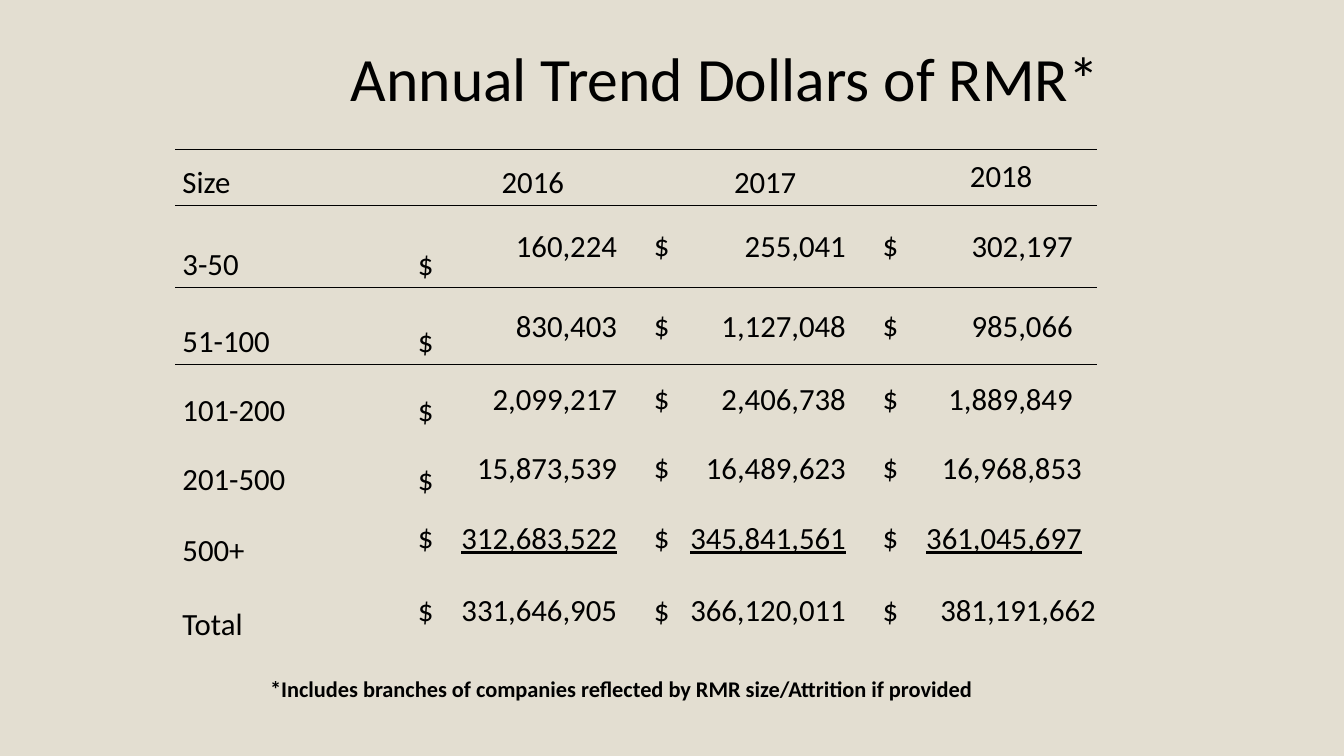
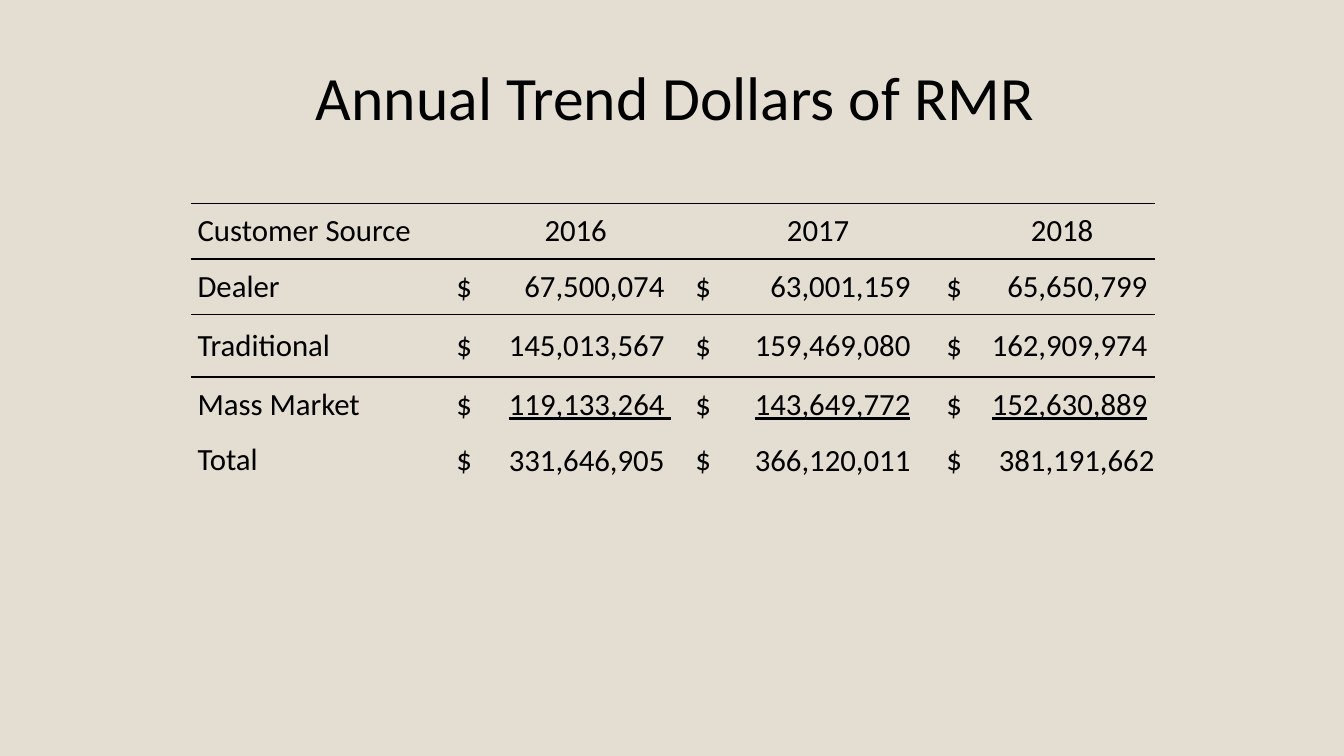
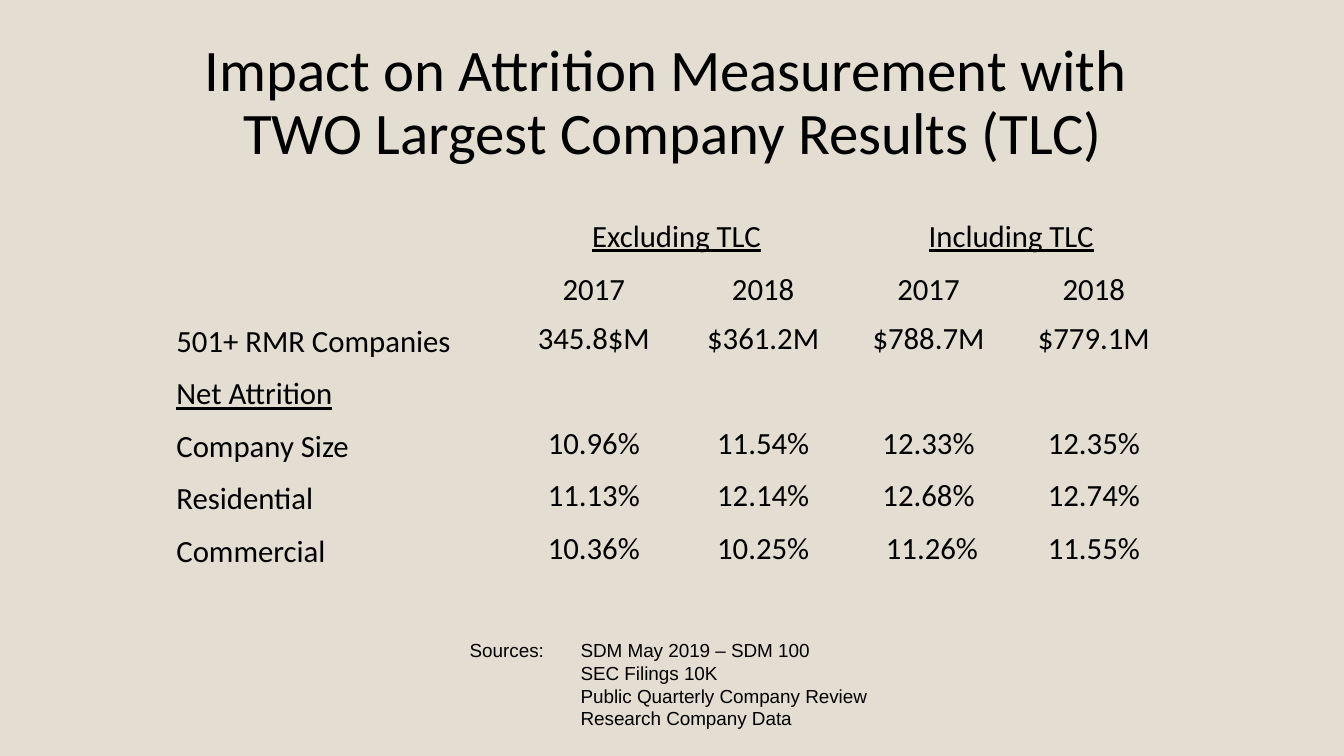
from itertools import product

from lxml import etree
from pptx import Presentation
from pptx.dml.color import RGBColor
from pptx.enum.text import MSO_ANCHOR as Anchor, PP_ALIGN as Align
from pptx.oxml.ns import qn
from pptx.util import Inches, Pt

COLORS = {"background": "E3DED1", "ink": "000000"}
BODY_FONT, SOURCE_FONT = "Calibri", "Arial"
TABLE_SIZE = 22
PLAIN_STYLE = "{2D5ABB26-0587-4C30-8999-92F81FD0307C}"
LABEL_INSETS = (0.07, 0.04, 0.07, 0.04)
WIDE_INSETS = (0.09, 0.04, 0.09, 0.04)
TIGHT_INSETS = (0.01, 0.01, 0.01, 0)


def write(para, text, size=TABLE_SIZE, font=BODY_FONT, bold=False,
          underline=False, align=Align.LEFT, spacing=None):
    """Put text in a paragraph; a newline becomes a line break."""
    para.alignment = align
    if spacing:
        para.line_spacing = spacing
    for index, line in enumerate(text.split("\n")):
        if index:
            para.add_line_break()
        span = para.add_run()
        span.text = line
        span.font.size = Pt(size)
        span.font.name = font
        span.font.bold = bold
        span.font.underline = underline
        span.font.color.rgb = RGBColor.from_string(COLORS["ink"])


def add_page(deck):
    page = deck.slides.add_slide(deck.slide_layouts[6])
    fill = page.background.fill
    fill.solid()
    fill.fore_color.rgb = RGBColor.from_string(COLORS["background"])
    return page


def add_text_frame(page, box, anchor=Anchor.TOP):
    frame = page.shapes.add_textbox(*map(Inches, box)).text_frame
    frame.word_wrap = True
    frame.vertical_anchor = anchor
    return frame


def add_title(page, box, text, size=44, align=Align.RIGHT):
    frame = add_text_frame(page, box, Anchor.MIDDLE)
    write(frame.paragraphs[0], text, size=size, align=align, spacing=0.9)


def add_grid(page, left, top, widths, heights):
    """Add a table with no fills and no rules."""
    frame = page.shapes.add_table(
        len(heights), len(widths), Inches(left), Inches(top),
        Inches(sum(widths)), Inches(sum(heights)))
    table = frame.table
    table.first_row = table.horz_banding = False
    table._tbl.tblPr.find(qn("a:tableStyleId")).text = PLAIN_STYLE
    for column, width in zip(table.columns, widths):
        column.width = Inches(width)
    for row, height in zip(table.rows, heights):
        row.height = Inches(height)
    for row, column in product(range(len(heights)), range(len(widths))):
        table.cell(row, column).fill.background()
    return table


def write_cell(cell, text, insets=LABEL_INSETS, anchor=Anchor.MIDDLE, **style):
    (cell.margin_left, cell.margin_top,
     cell.margin_right, cell.margin_bottom) = map(Inches, insets)
    cell.vertical_anchor = anchor
    write(cell.text_frame.paragraphs[0], text, **style)


def rule_cell(cell, *sides):
    """Draw 1 pt rules on the given sides, named in schema order."""
    properties = cell._tc.get_or_add_tcPr()
    for index, side in enumerate(sides):
        line = etree.Element(qn(f"a:ln{side}"), w=str(Pt(1)))
        fill = etree.SubElement(line, qn("a:solidFill"))
        etree.SubElement(fill, qn("a:srgbClr"), val=COLORS["ink"])
        properties.insert(index, line)


def add_trend_table(page, left, top, widths, heights, heading, rows,
                    last_gaps, label_anchor=Anchor.MIDDLE,
                    header_anchors=(Anchor.MIDDLE,) * 3, low_dollars=0,
                    wide_heading=False):
    """Dollar amounts by year; last_gaps are the right insets of 2018."""
    table = add_grid(page, left, top, widths, heights)

    # Header row
    if wide_heading:
        table.cell(0, 0).merge(table.cell(0, 1))
    write_cell(table.cell(0, 0), heading, anchor=label_anchor)
    for index, year in enumerate(("2016", "2017", "2018")):
        write_cell(table.cell(0, 2 + 2 * index), year,
                   anchor=header_anchors[index], align=Align.CENTER)

    # Amounts, each with its dollar sign in the narrow column before it
    for number, (label, *amounts) in enumerate(rows, 1):
        write_cell(table.cell(number, 0), label, anchor=label_anchor)
        for index, amount in enumerate(amounts):
            column = 1 + 2 * index
            is_low = index == 0 and number <= low_dollars
            write_cell(table.cell(number, column), "$", align=Align.RIGHT,
                       anchor=Anchor.BOTTOM if is_low else Anchor.MIDDLE)
            gap = last_gaps[number - 1] if index == 2 else 0.08
            if amount.endswith(" "):
                gap = 0.01
            write_cell(table.cell(number, column + 1), amount,
                       insets=(0.01, 0.01, gap, 0), align=Align.RIGHT,
                       underline=number == len(rows) - 1)

    # Rules around the header and below the first row
    for column in range(len(widths)):
        rule_cell(table.cell(0, column), "T", "B")
        rule_cell(table.cell(1, column), "T", "B")
        rule_cell(table.cell(2, column), "T")


def add_attrition_table(page, left, top, widths, heights, rows):
    table = add_grid(page, left, top, widths, heights)
    low = {"insets": WIDE_INSETS, "anchor": Anchor.BOTTOM}

    # Two header rows
    table.cell(0, 0).merge(table.cell(1, 0))
    for column, group in ((1, "Excluding TLC"), (3, "Including TLC")):
        table.cell(0, column).merge(table.cell(0, column + 1))
        write_cell(table.cell(0, column), group, underline=True,
                   align=Align.CENTER, **low)
        for offset, year in enumerate(("2017", "2018")):
            write_cell(table.cell(1, column + offset), year,
                       align=Align.CENTER, **low)

    # Body; a row without values is a subheading
    for number, (label, *values) in enumerate(rows, 2):
        write_cell(table.cell(number, 0), label, underline=not values, **low)
        for column, value in enumerate(values, 1):
            write_cell(table.cell(number, column), value, align=Align.CENTER,
                       insets=WIDE_INSETS if number == 2 else TIGHT_INSETS)


def add_sources(page, box, heading, sources):
    frame = add_text_frame(page, box)
    for index, source in enumerate(sources):
        para = frame.add_paragraph() if index else frame.paragraphs[0]
        tabs = etree.SubElement(para._p.get_or_add_pPr(), qn("a:tabLst"))
        etree.SubElement(tabs, qn("a:tab"), pos=str(Inches(1.1)), algn="l")
        write(para, ("" if index else heading) + "\t" + source,
              size=13.5, font=SOURCE_FONT)


def build_size_page(deck):
    page = add_page(deck)
    add_title(page, (1.61, 0.37, 9.4, 0.88), "Annual Trend Dollars of RMR*")
    add_trend_table(
        page, 1.74, 1.48,
        widths=(2.12, 0.51, 1.83, 0.51, 1.76, 0.51, 1.9),
        heights=(0.56, 0.81, 0.77, 0.68, 0.69, 0.7, 0.74),
        heading="Size",
        rows=(
            ("3-50", "160,224", "255,041", "302,197"),
            ("51-100", "830,403", "1,127,048", "985,066"),
            ("101-200", "2,099,217", "2,406,738", "1,889,849"),
            ("201-500", "15,873,539", "16,489,623", "16,968,853"),
            ("500+", "312,683,522", "345,841,561", "361,045,697"),
            ("Total", "331,646,905", "366,120,011", "381,191,662"),
        ),
        last_gaps=(0.24, 0.24, 0.24, 0.15, 0.15, 0.01),
        label_anchor=Anchor.BOTTOM,
        header_anchors=(Anchor.BOTTOM, Anchor.BOTTOM, Anchor.MIDDLE),
        low_dollars=4)
    note = add_text_frame(page, (2.58, 6.65, 8.17, 0.37))
    write(note.paragraphs[0],
          "*Includes branches of companies reflected by RMR size/Attrition "
          "if provided", size=16, bold=True)


def build_customer_page(deck):
    page = add_page(deck)
    add_title(page, (0.96, 0.28, 9.4, 1.44), "Annual Trend Dollars of RMR")
    add_trend_table(
        page, 1.89, 2.02,
        widths=(2.41, 0.45, 1.92, 0.45, 1.99, 0.5, 1.85),
        heights=(0.55, 0.55, 0.62, 0.55, 0.55),
        heading="Customer Source",
        rows=(
            ("Dealer", "67,500,074", "63,001,159", "65,650,799"),
            ("Traditional", "145,013,567", "159,469,080", "162,909,974"),
            ("Mass Market", "119,133,264 ", "143,649,772", "152,630,889"),
            ("Total", "331,646,905", "366,120,011", "381,191,662"),
        ),
        last_gaps=(0.08, 0.08, 0.08, 0.01),
        wide_heading=True)


def build_attrition_page(deck):
    page = add_page(deck)
    add_title(page, (1.8, 0.31, 9.74, 1.44),
              "Impact on Attrition Measurement with \n"
              "TWO Largest Company Results (TLC)",
              size=42, align=Align.CENTER)
    add_attrition_table(
        page, 1.66, 1.89,
        widths=(3.37, 1.72, 1.64, 1.64, 1.64),
        heights=(0.69,) + (0.52,) * 6,
        rows=(
            ("501+ RMR Companies", "345.8$M", "$361.2M", "$788.7M", "$779.1M"),
            ("Net Attrition",),
            ("Company Size", "10.96%", "11.54%", "12.33%", "12.35%"),
            ("Residential", "11.13%", "12.14%", "12.68%", "12.74%"),
            ("Commercial", "10.36%", "10.25%", " 11.26%", "11.55%"),
        ))
    add_sources(page, (4.56, 6.29, 5.42, 1.01), "Sources:", (
        "SDM May 2019 – SDM 100",
        "SEC Filings 10K",
        "Public Quarterly Company Review",
        "Research Company Data",
    ))


def main():
    deck = Presentation()
    deck.slide_width, deck.slide_height = Inches(13.33), Inches(7.5)
    build_size_page(deck)
    build_customer_page(deck)
    build_attrition_page(deck)
    deck.save("out.pptx")


if __name__ == "__main__":
    main()
